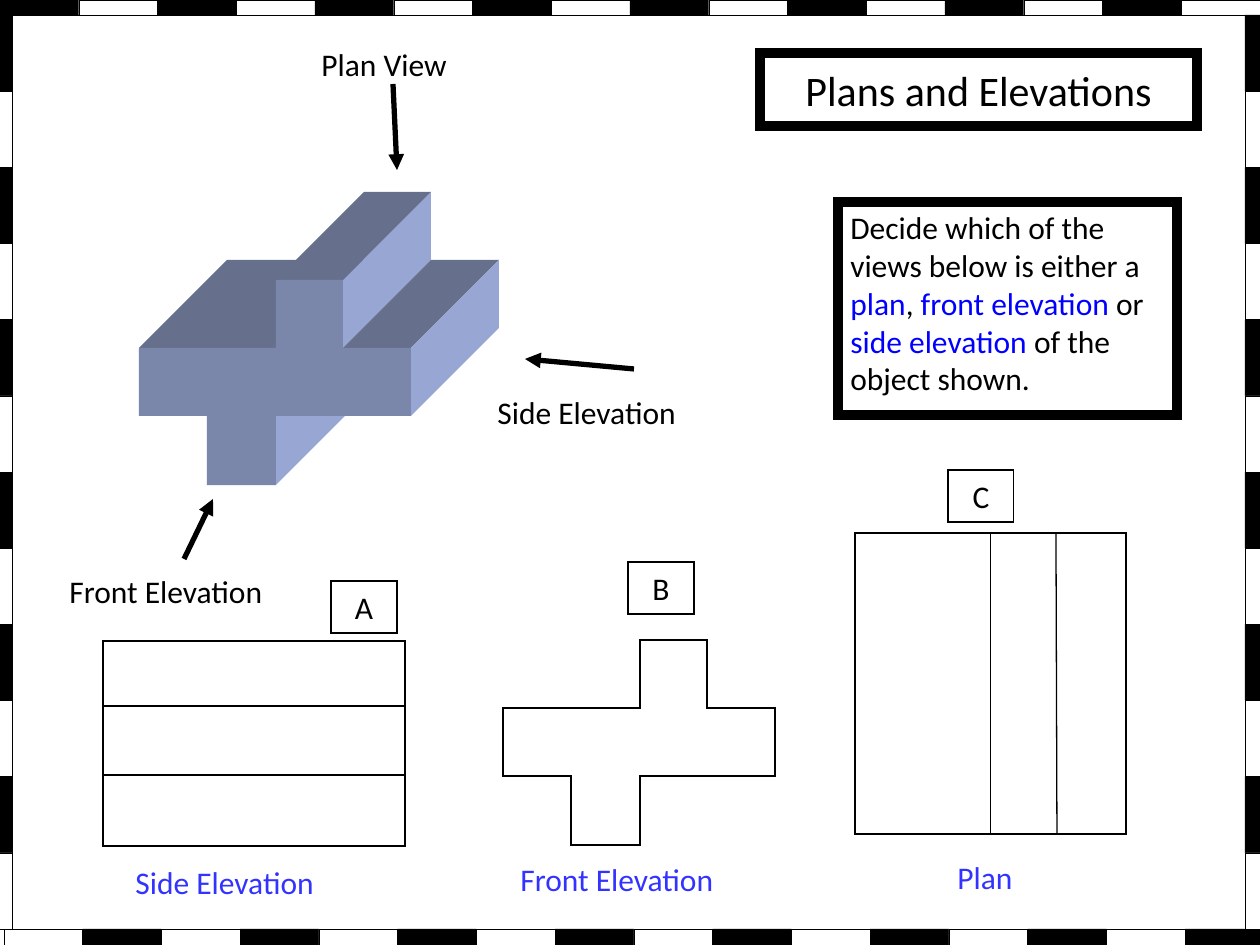
from dataclasses import dataclass
from lxml import etree
from pptx import Presentation
from pptx import util as u
from pptx.dml.color import RGBColor
from pptx.enum import shapes, text
from pptx.oxml import ns

PX = 914400 / 126


@dataclass(frozen=True)
class Theme:
    font: str = "Calibri"
    title_size: int = 24
    body_size: int = 18
    ink: str = "000000"
    paper: str = "FFFFFF"
    keyword: str = "0000FF"
    answer: str = "3333FF"
    front: str = "7B87AA"
    side: str = "97A6D3"
    top: str = "66708D"
    frame: float = 6
    arrow: float = 3
    thin: float = 0.75
    hairline: float = 0.25


THEME = Theme()

TITLE = ("Plans and Elevations", (760, 53, 437, 73))
TASK_BOX = (838, 202, 339, 213)
TASK = [
    ("Decide which of the views below is either a ", THEME.ink),
    ("plan", THEME.keyword),
    (", ", THEME.ink),
    ("front elevation", THEME.keyword),
    (" or ", THEME.ink),
    ("side elevation", THEME.keyword),
    (" of the object shown.", THEME.ink),
]
LABELS = [
    ("Front Elevation", THEME.ink, (57, 566, 246, 50)),
    ("Side Elevation", THEME.ink, (485, 387, 246, 50)),
    ("Plan View", THEME.ink, (309, 39, 176, 50)),
    ("Side Elevation", THEME.answer, (123, 857, 281, 50)),
    ("Front Elevation", THEME.answer, (508, 854, 281, 50)),
    ("Plan", THEME.answer, (945, 852, 281, 50)),
]
LETTERS = [("A", 331, 581), ("B", 628, 562), ("C", 948, 470)]
LETTER_SIZE = (66, 52)
ARROWS = [(634, 369, 525, 359), (393, 84, 397, 170), (184, 559, 213, 499)]

CROSS = [(139, 348), (276, 348), (276, 280), (343, 280), (343, 348), (411, 348),
         (411, 416), (276, 416), (276, 485), (207, 485), (207, 416), (139, 416)]
DEPTH = (88, -88)
VISIBLE_EDGES = [(7, THEME.side), (0, THEME.top), (3, THEME.side), (4, THEME.top),
                 (5, THEME.side), (2, THEME.top)]
FRONT_VIEW_SHIFT = (364, 360)
SIDE_VIEW = (103, 641, 302, 205)
SIDE_VIEW_LINES = [(104, 706, 405, 706), (103, 775, 405, 775)]
PLAN_VIEW = (855, 533, 271, 301)
PLAN_MIDDLE = (990, 834, 990, 533)
PLAN_RIGHT = (1056, 533, 1057, 834)

# BORDER_PLACEHOLDER
BORDERS = [
    ("across", (0, 0), 1260, 15, 16, (THEME.ink, THEME.paper)),
    ("across", (4, 929), 1260, 16, 16, (THEME.paper, THEME.ink)),
    ("down", (1245, 15), 914, 15, 12, (THEME.ink, THEME.paper)),
    ("down", (-4, 15), 914, 16, 12, (THEME.ink, THEME.paper)),
]


def emu(*lengths):
    return [u.Emu(round(length * PX)) for length in lengths]


def style(shape, fill=None, line=None):
    shape.shadow.inherit = False
    if fill:
        shape.fill.solid()
        shape.fill.fore_color.rgb = RGBColor.from_string(fill)
    else:
        shape.fill.background()
    if line:
        outline(shape, line)
        ln = shape._element.spPr.find(ns.qn("a:ln"))
        etree.SubElement(ln, ns.qn("a:miter"), lim="800000")
    else:
        shape.line.fill.background()


def outline(shape, width):
    shape.line.width = u.Pt(width)
    shape.line.color.rgb = RGBColor.from_string(THEME.ink)


def add_rectangle(parent, box, fill=None, line=None):
    shape = parent.add_shape(shapes.MSO_SHAPE.RECTANGLE, *emu(*box))
    style(shape, fill, line)
    return shape


def add_polygon(parent, points, fill=None, line=None):
    builder = parent.build_freeform(*points[0], scale=PX)
    builder.add_line_segments(points[1:], close=True)
    style(builder.convert_to_shape(), fill, line)


def add_line(parent, ends, width, arrow=False):
    line = parent.add_connector(shapes.MSO_CONNECTOR.STRAIGHT, *emu(*ends))
    outline(line, width)
    properties = line._element.spPr
    if arrow:
        etree.SubElement(properties.find(ns.qn("a:ln")), ns.qn("a:tailEnd"), type="triangle")
    etree.SubElement(properties, ns.qn("a:effectLst"))
    return line


def write(shape, runs, size=THEME.body_size, align=text.PP_ALIGN.LEFT,
          anchor=text.MSO_ANCHOR.TOP):
    frame = shape.text_frame
    frame.word_wrap = True
    frame.auto_size = text.MSO_AUTO_SIZE.NONE
    frame.vertical_anchor = anchor
    paragraph = frame.paragraphs[0]
    paragraph.alignment = align
    for words, color in runs:
        run = paragraph.add_run()
        run.text = words
        run.font.name = THEME.font
        run.font.size = u.Pt(size)
        run.font.color.rgb = RGBColor.from_string(color)


def add_border(slide, direction, origin, length, thickness, count, colors):
    group = slide.shapes.add_group_shape()
    left, top = origin
    step = length / count
    for index in range(count):
        if direction == "across":
            box = (left + index * step, top, step, thickness)
        else:
            box = (left, top + index * step, thickness, step)
        add_rectangle(group.shapes, box, colors[index % 2], THEME.hairline)


def add_solid(slide):
    dx, dy = DEPTH
    for index, color in VISIBLE_EDGES:
        (x1, y1), (x2, y2) = CROSS[index:index + 2]
        face = [(x1, y1), (x2, y2), (x2 + dx, y2 + dy), (x1 + dx, y1 + dy)]
        add_polygon(slide.shapes, face, color)
    add_polygon(slide.shapes, CROSS, THEME.front)


def add_views(slide):
    dx, dy = FRONT_VIEW_SHIFT
    add_polygon(slide.shapes, [(x + dx, y + dy) for x, y in CROSS], line=THEME.thin)
    add_rectangle(slide.shapes, SIDE_VIEW, line=THEME.thin)
    plan = add_rectangle(slide.shapes, PLAN_VIEW, line=THEME.thin)
    for ends in SIDE_VIEW_LINES + [PLAN_RIGHT]:
        add_line(slide.shapes, ends, THEME.thin)
    middle = add_line(slide.shapes, PLAN_MIDDLE, THEME.thin)
    middle.begin_connect(plan, 2)
    middle.end_connect(plan, 0)


def main():
    presentation = Presentation()
    presentation.slide_width, presentation.slide_height = emu(1260, 945)
    slide = presentation.slides.add_slide(presentation.slide_layouts[5])
    centered = {"align": text.PP_ALIGN.CENTER, "anchor": text.MSO_ANCHOR.MIDDLE}

    title = slide.shapes.title
    words, box = TITLE
    title.left, title.top, title.width, title.height = emu(*box)
    outline(title, THEME.frame)
    etree.SubElement(title._element.spPr.find(ns.qn("a:ln")), ns.qn("a:miter"), lim="800000")
    write(title, [(words, THEME.ink)], THEME.title_size, **centered)

    add_solid(slide)
    write(add_rectangle(slide.shapes, TASK_BOX, line=THEME.frame), TASK)
    for words, color, box in LABELS:
        write(slide.shapes.add_textbox(*emu(*box)), [(words, color)])
    for ends in ARROWS:
        add_line(slide.shapes, ends, THEME.arrow, arrow=True)
    for border in BORDERS:
        add_border(slide, *border)
    add_views(slide)
    for letter, left, top in LETTERS:
        box = add_rectangle(slide.shapes, (left, top, *LETTER_SIZE), line=THEME.thin)
        write(box, [(letter, THEME.ink)], **centered)

    presentation.save("out.pptx")


if __name__ == "__main__":
    main()
